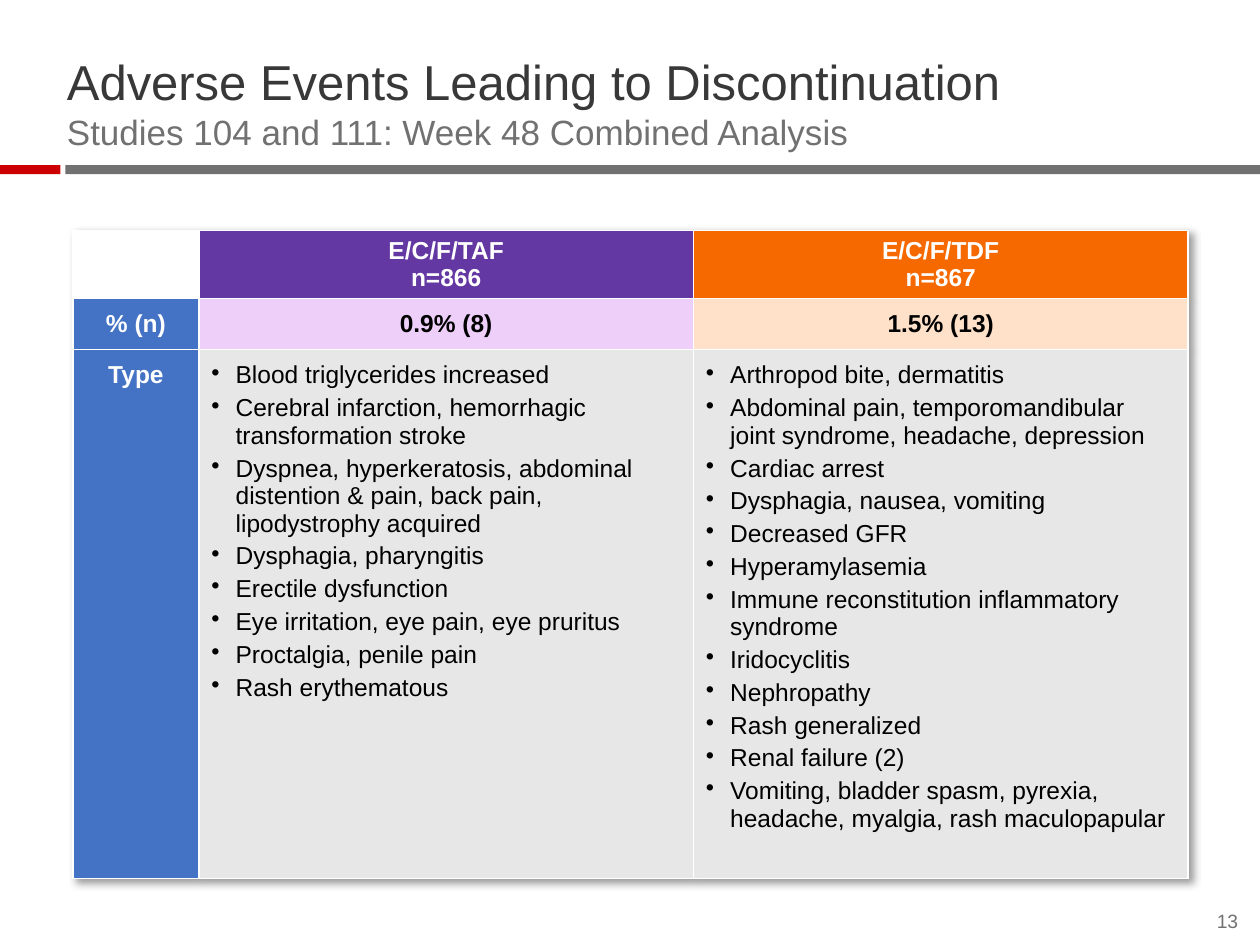
from lxml import etree
from pptx import Presentation
from pptx import util as u
from pptx.dml.color import RGBColor
from pptx.enum import shapes, text
from pptx.oxml import parse_xml
from pptx.oxml.ns import nsdecls, qn

COLORS = {
    "white": "FFFFFF", "black": "000000", "title": "383838", "gray": "717171",
    "red": "CC0000", "purple": "6338A2", "orange": "F66900", "blue": "4472C4",
    "lilac": "EDCFFA", "peach": "FFE1CA", "pale": "E7E7E7",
}
TAF_EVENTS = [
    "Blood triglycerides increased",
    "Cerebral infarction, hemorrhagic transformation stroke",
    "Dyspnea, hyperkeratosis, abdominal distention & pain, back pain, lipodystrophy acquired",
    "Dysphagia, pharyngitis",
    "Erectile dysfunction",
    "Eye irritation, eye pain, eye pruritus",
    "Proctalgia, penile pain",
    "Rash erythematous",
]
TDF_EVENTS = [
    "Arthropod bite, dermatitis",
    "Abdominal pain, temporomandibular joint syndrome, headache, depression",
    "Cardiac arrest",
    "Dysphagia, nausea, vomiting",
    "Decreased GFR",
    "Hyperamylasemia",
    "Immune reconstitution inflammatory syndrome",
    "Iridocyclitis",
    "Nephropathy",
    "Rash generalized",
    "Renal failure (2)",
    "Vomiting, bladder spasm, pyrexia, headache, myalgia, rash maculopapular",
]
CENTER = text.PP_ALIGN.CENTER
TOP, MIDDLE, BOTTOM = (text.MSO_ANCHOR.TOP, text.MSO_ANCHOR.MIDDLE,
                       text.MSO_ANCHOR.BOTTOM)


def rgb(name):
    """Return the named colour."""
    return RGBColor.from_string(COLORS[name])


def write(para, words, size=14, color="black", bold=False, font="Arial"):
    """Add text to a paragraph, turning newlines into line breaks."""
    for index, line in enumerate(words.split("\n")):
        if index:
            para.add_line_break()
        if line:
            span = para.add_run()
            span.text = line
            span.font.name = font
            span.font.size = u.Pt(size)
            span.font.bold = bold
            span.font.color.rgb = rgb(color)


def set_margins(target, margins):
    """Set left, top, right and bottom margins in centimetres."""
    for side, value in zip(("left", "top", "right", "bottom"), margins):
        setattr(target, f"margin_{side}", u.Cm(value))


class SlideBuilder:
    """Hold the style and the current slide."""

    def __init__(self, page):
        """Start on a blank page."""
        self.page = page

    def bar(self, left, top, width, height, color):
        """Draw a plain filled rectangle."""
        box = self.page.shapes.add_shape(
            shapes.MSO_SHAPE.RECTANGLE, *map(u.Cm, (left, top, width, height)))
        box.shadow.inherit = False
        box.fill.solid()
        box.fill.fore_color.rgb = rgb(color)
        box.line.fill.background()

    def label(self, left, top, width, height, spans,
              margins=(0, 0, 0, 0), anchor=TOP):
        """Add a text box of one paragraph with formatted spans."""
        box = self.page.shapes.add_textbox(*map(u.Cm, (left, top, width, height)))
        frame = box.text_frame
        frame.word_wrap = True
        frame.vertical_anchor = anchor
        set_margins(frame, margins)
        for words, style in spans:
            write(frame.paragraphs[0], words, **style)

    def table(self, left, top, widths, heights):
        """Add an unbanded table with a soft shadow."""
        grid = self.page.shapes.add_table(
            len(heights), len(widths),
            *map(u.Cm, (left, top, sum(widths), sum(heights)))).table
        grid.first_row = grid.horz_banding = False
        for column, width in zip(grid.columns, widths):
            column.width = u.Cm(width)
        for row, height in zip(grid.rows, heights):
            row.height = u.Cm(height)
        grid._tbl.tblPr.insert(0, parse_xml(
            f'<a:effectLst {nsdecls("a")}><a:outerShdw blurRad="50800" dist="38100" '
            'dir="2700000" algn="tl" rotWithShape="0"><a:srgbClr val="000000">'
            '<a:alpha val="40000"/></a:srgbClr></a:outerShdw></a:effectLst>'))
        return grid

    def cell(self, cell, fill, sides, lines=(), color="white", bold=True,
             anchor=MIDDLE, margins=(0.13, 0.13, 0.13, 0.13), bullets=False):
        """Fill one table cell with its lines, borders and colour."""
        properties = cell._tc.get_or_add_tcPr()
        for side in sides:
            properties.append(parse_xml(
                f'<a:ln{side} {nsdecls("a")} w="12700"><a:solidFill>'
                f'<a:srgbClr val="{COLORS["white"]}"/></a:solidFill></a:ln{side}>'))
        cell.fill.solid()
        cell.fill.fore_color.rgb = rgb(fill)
        cell.vertical_anchor = anchor
        set_margins(cell, margins)
        frame = cell.text_frame
        for index, line in enumerate(lines):
            para = frame.add_paragraph() if index else frame.paragraphs[0]
            if bullets:
                self.bullet(para)
            else:
                para.alignment = CENTER
            write(para, line, color=color, bold=bold)

    def bullet(self, para):
        """Give a paragraph a hanging bullet."""
        para.space_before = u.Pt(3)
        properties = para._p.get_or_add_pPr()
        properties.set("marL", str(u.Cm(0.49)))
        properties.set("indent", str(-u.Cm(0.49)))
        etree.SubElement(properties, qn("a:buChar")).set("char", "•")


def main():
    """Build the adverse events slide."""
    deck = Presentation()
    deck.slide_width, deck.slide_height = u.Cm(25.4), u.Cm(19.05)
    builder = SlideBuilder(deck.slides.add_slide(deck.slide_layouts[6]))

    builder.bar(1.32, 3.33, 24.08, 0.18, "gray")
    builder.bar(0, 3.33, 1.22, 0.18, "red")

    header = dict(anchor=BOTTOM, margins=(0.25, 0.13, 0.25, 0.13))
    side = dict(fill="blue")
    rate = dict(color="black")
    events = dict(fill="pale", color="black", bold=False, anchor=TOP,
                  margins=(0.25, 0.25, 0.25, 0.05), bullets=True)
    rows = [
        [dict(fill="white"),
         dict(header, fill="purple", lines=["E/C/F/TAF\nn=866"]),
         dict(header, fill="orange", lines=["E/C/F/TDF\nn=867"])],
        [dict(side, lines=["% (n)"]),
         dict(rate, fill="lilac", lines=["0.9% (8)"]),
         dict(rate, fill="peach", lines=["1.5% (13)"])],
        [dict(side, lines=["Type"], anchor=TOP, margins=(0.13, 0.25, 0.13, 0.13)),
         dict(events, lines=TAF_EVENTS),
         dict(events, lines=TDF_EVENTS)],
    ]
    grid = builder.table(1.47, 4.65, [2.54, 9.97, 9.97], [1.35, 1.02, 10.67])
    for r, row in enumerate(rows):
        for c, content in enumerate(row):
            inner = {"L": True, "R": c < 2, "T": r > 0, "B": r < 2}
            sides = [name for name, shown in inner.items() if shown]
            builder.cell(grid.cell(r, c), sides=sides, **content)

    builder.label(1.35, 1.19, 22.86, 1.88, [
        ("Adverse Events Leading to Discontinuation\n", dict(size=28, color="title")),
        ("Studies 104 and 111: Week 48 Combined Analysis", dict(size=20, color="gray")),
    ], anchor=BOTTOM)
    builder.label(24.28, 18.21, 1.12, 0.69, [("13", dict(size=11, color="gray"))],
                  margins=(0.25, 0.13, 0.25, 0.13))
    deck.save("out.pptx")


if __name__ == "__main__":
    main()
